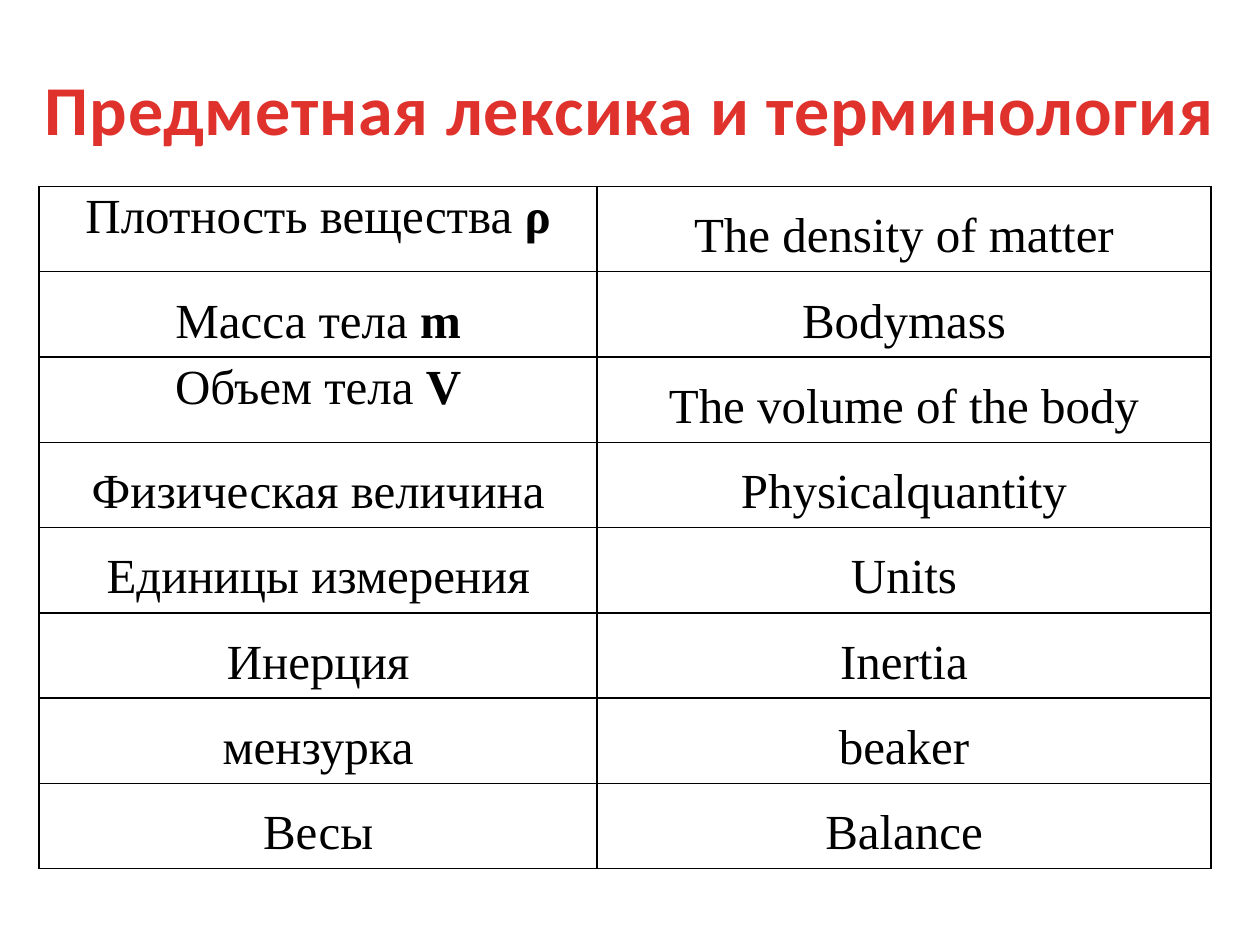
from pptx import Presentation
from pptx.dml.color import RGBColor
from pptx.enum import text
from pptx.oxml import parse_xml
from pptx.oxml.ns import nsdecls
from pptx.util import Inches, Pt

TITLE = "Предметная лексика и терминология"
# Russian term, its symbol, English term
TERMS = [
    ("Плотность вещества ", "ρ", "The density of matter"),
    ("Масса тела ", "m", "Bodymass"),
    ("Объем тела ", "V", "The volume of the body"),
    ("Физическая величина", "", "Physicalquantity"),
    ("Единицы измерения", "", "Units"),
    ("Инерция", "", "Inertia"),
    ("мензурка", "", "beaker"),
    ("Весы", "", "Balance"),
]
RAISED = {"Плотность вещества ", "Объем тела "}  # terms set at the cell top

THEME = {
    "title": {"name": "Calibri", "size": Pt(40), "bold": True,
              "color": RGBColor.from_string("E0322D")},
    "cell": {"name": "Times New Roman", "size": Pt(28), "bold": False,
             "color": RGBColor.from_string("000000")},
    "border": "000000",
}
COLUMNS = (4.43, 4.87)
ROW_HEIGHT = 0.677
TEXT_DROP = 0.15


def add_run(p, words, style, **changes):
    r = p.add_run()
    r.text = words
    for name, value in {**style, **changes}.items():
        if name == "color":
            r.font.color.rgb = value
        else:
            setattr(r.font, name, value)
    return r


def add_borders(cell):
    tcPr = cell._tc.get_or_add_tcPr()
    for i, side in enumerate(("lnL", "lnR", "lnT", "lnB")):
        tcPr.insert(i, parse_xml(
            f'<a:{side} {nsdecls("a")} w="12700"><a:solidFill>'
            f'<a:srgbClr val="{THEME["border"]}"/></a:solidFill></a:{side}>'))


def fill_cell(cell, words, symbol=""):
    margins = {"margin_left": 0.07, "margin_right": 0.07, "margin_bottom": 0,
               "margin_top": 0 if words in RAISED else TEXT_DROP}
    for name, value in margins.items():
        setattr(cell, name, Inches(value))
    cell.fill.background()
    add_borders(cell)
    p = cell.text_frame.paragraphs[0]
    p.alignment = text.PP_ALIGN.CENTER
    p.line_spacing = 1.07
    add_run(p, words, THEME["cell"])
    if symbol:
        add_run(p, symbol, THEME["cell"], bold=True)


def add_title(s):
    sp = s.shapes.title
    sp.left, sp.top, sp.width, sp.height = map(Inches, (0, 0.47, 10, 0.77))
    tf = sp.text_frame
    tf.word_wrap = True
    tf.vertical_anchor = text.MSO_ANCHOR.TOP
    p = tf.paragraphs[0]
    p.alignment = text.PP_ALIGN.CENTER
    r = add_run(p, TITLE, THEME["title"])
    r.font._element.set("spc", "50")


def add_terms(s):
    table = s.shapes.add_table(
        len(TERMS), len(COLUMNS), Inches(0.31), Inches(1.48),
        Inches(sum(COLUMNS)), Inches(ROW_HEIGHT * len(TERMS))).table
    table.first_row = table.horz_banding = False
    for column, width in zip(table.columns, COLUMNS):
        column.width = Inches(width)
    for i, (russian, symbol, english) in enumerate(TERMS):
        table.rows[i].height = Inches(ROW_HEIGHT)
        fill_cell(table.cell(i, 0), russian, symbol)
        fill_cell(table.cell(i, 1), english)


def main():
    prs = Presentation()
    prs.slide_width, prs.slide_height = Inches(10), Inches(7.5)
    s = prs.slides.add_slide(prs.slide_layouts[5])
    add_title(s)
    add_terms(s)
    prs.save("out.pptx")


if __name__ == "__main__":
    main()
